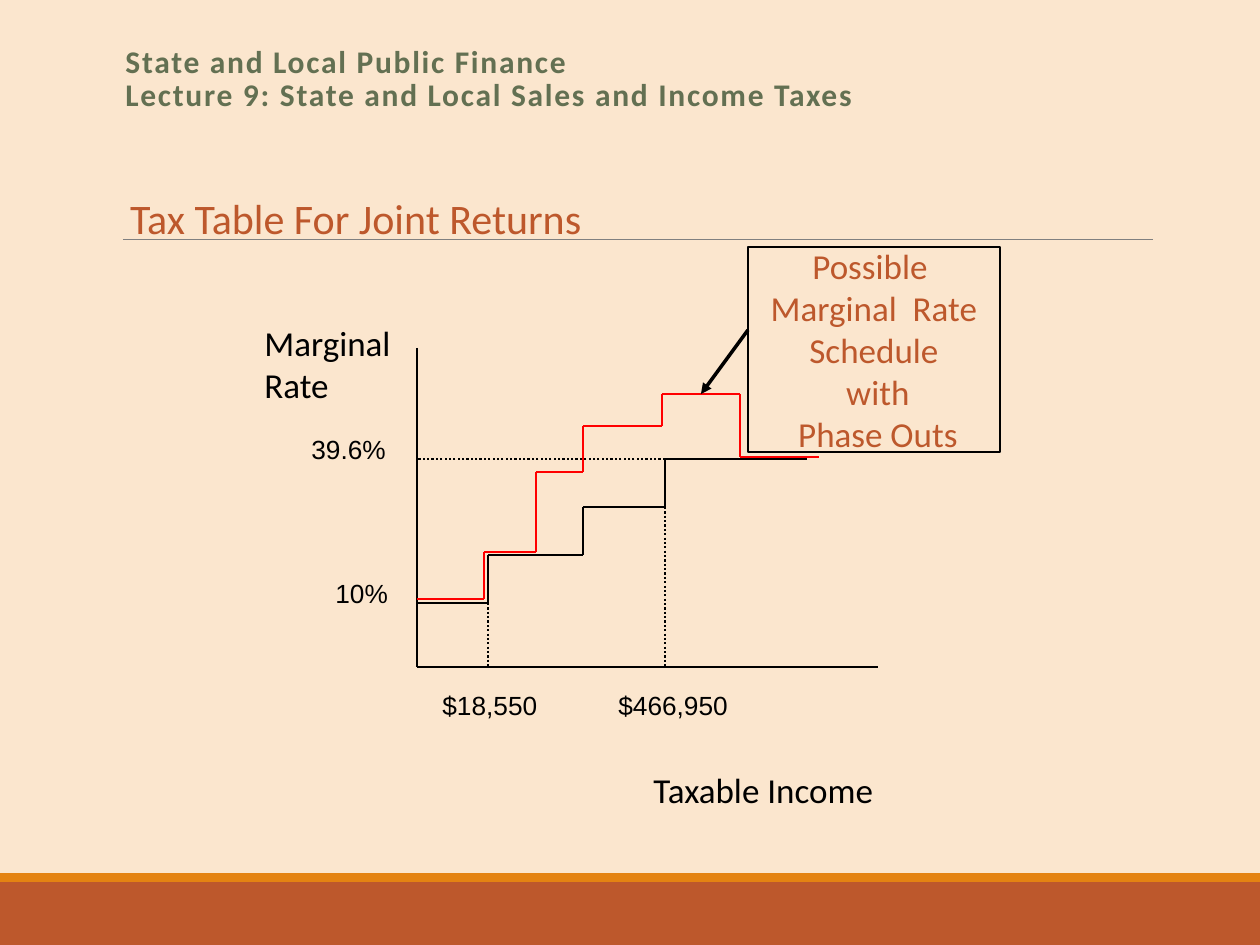
import dataclasses
import itertools

import lxml.etree
import pptx
import pptx.dml.color
import pptx.enum.dml
import pptx.enum.shapes
import pptx.enum.text
import pptx.oxml.ns
import pptx.util

EMU_PER_PX = 914400 / 126
COLORS = {
    "background": "FBE6CE",
    "rust": "BD582C",
    "orange": "E48312",
    "green": "637052",
    "gray": "808080",
    "black": "000000",
    "red": "FF0000",
}
Point = tuple[int, int]


@dataclasses.dataclass(frozen=True)
class Band:
    top: int
    height: int
    color: str


@dataclasses.dataclass(frozen=True)
class Label:
    lines: tuple[str, ...]
    left: int
    top: int
    width: int
    height: int
    size: int = 20
    font: str = "Calibri"
    color: str = "black"
    bold: bool = False
    tracking: float = 0
    frame_format: dict = dataclasses.field(default_factory=lambda: {"word_wrap": True})
    paragraph_format: dict = dataclasses.field(default_factory=dict)
    outlined: bool = False


@dataclasses.dataclass(frozen=True)
class Path:
    points: tuple[Point, ...]
    color: str = "black"
    width: float = 0.75
    dotted: bool = False
    arrow: bool = False


def px(length: int) -> int:
    return round(length * EMU_PER_PX)


def rgb(name: str) -> pptx.dml.color.RGBColor:
    return pptx.dml.color.RGBColor.from_string(COLORS[name])


def set_all(target, values: dict) -> None:
    for name, value in values.items():
        setattr(target, name, value)


def draw_band(slide, band: Band) -> None:
    shape = slide.shapes.add_shape(
        pptx.enum.shapes.MSO_SHAPE.RECTANGLE, 0, px(band.top), px(1260), px(band.height)
    )
    shape.shadow.inherit = False
    shape.fill.solid()
    shape.fill.fore_color.rgb = rgb(band.color)
    shape.line.fill.background()


def draw_label(slide, label: Label) -> None:
    box = [px(length) for length in (label.left, label.top, label.width, label.height)]
    if label.outlined:
        shape = slide.shapes.add_shape(pptx.enum.shapes.MSO_SHAPE.RECTANGLE, *box)
        shape.shadow.inherit = False
        shape.fill.background()
        shape.line.color.rgb = rgb("black")
        shape.line.width = pptx.util.Pt(0.75)
    else:
        shape = slide.shapes.add_textbox(*box)
    frame = shape.text_frame
    frame.text = "\n".join(label.lines)
    set_all(frame, label.frame_format)
    font_format = {
        "size": pptx.util.Pt(label.size),
        "name": label.font,
        "bold": label.bold,
    }
    for paragraph in frame.paragraphs:
        set_all(paragraph, label.paragraph_format)
        for run in paragraph.runs:
            set_all(run.font, font_format)
            run.font.color.rgb = rgb(label.color)
            if label.tracking:
                run.font._element.set("spc", str(round(label.tracking * 100)))


def draw_path(slide, path: Path) -> None:
    """Join each pair of neighbouring points with a straight connector."""
    for start, end in itertools.pairwise(path.points):
        connector = slide.shapes.add_connector(
            pptx.enum.shapes.MSO_CONNECTOR.STRAIGHT, *map(px, start + end)
        )
        connector.line.color.rgb = rgb(path.color)
        connector.line.width = pptx.util.Pt(path.width)
        if path.dotted:
            connector.line.dash_style = pptx.enum.dml.MSO_LINE.ROUND_DOT
        if path.arrow:
            lxml.etree.SubElement(
                connector.line._get_or_add_ln(), pptx.oxml.ns.qn("a:tailEnd"), type="triangle"
            )
        lxml.etree.SubElement(
            connector._element.spPr, pptx.oxml.ns.qn("a:effectLst")
        )


def stairs(start: Point, steps: tuple[Point, ...], end_x: int) -> tuple[Point, ...]:
    """Turn (x, new level) steps into the corners of a staircase."""
    points, level = [start], start[1]
    for x, new_level in steps:
        points += [(x, level), (x, new_level)]
        level = new_level
    return (*points, (end_x, level))


ORIGIN = (417, 667)
FIRST_BRACKET, TOP_BRACKET, TOP_RATE = 488, 665, 459

BANDS = (Band(882, 63, "rust"), Band(873, 9, "orange"))
PATHS = (
    Path(((123, 239), (1153, 239)), "gray", 0.5),
    Path(((417, 348), ORIGIN, (878, 667))),
    Path(stairs((417, 603), ((FIRST_BRACKET, 555), (583, 507), (TOP_BRACKET, TOP_RATE)), 807)),
    Path(((TOP_BRACKET, TOP_RATE), (417, TOP_RATE)), width=1.25, dotted=True),
    Path(((FIRST_BRACKET, 603), (FIRST_BRACKET, 667)), width=1.25, dotted=True),
    Path(((TOP_BRACKET, 507), (TOP_BRACKET, 667)), width=1.25, dotted=True),
    Path(
        stairs((417, 599), ((484, 552), (536, 472), (583, 426), (662, 394), (740, 457)), 819),
        "red",
        1.25,
    ),
    Path(((748, 330), (701, 394)), width=2, arrow=True),
)
LABELS = (
    Label(
        ("State and Local Public Finance\vLecture 9: State and Local Sales and Income Taxes",),
        113, 42, 1040, 82, size=18, color="green", bold=True, tracking=1,
        paragraph_format={"line_spacing": 0.85},
    ),
    Label(
        ("Tax Table For Joint Returns",), 130, 192, 638, 49, size=24, color="rust",
        frame_format={"word_wrap": True, "margin_left": 0, "margin_right": 0},
        paragraph_format={
            "line_spacing": 0.9,
            "space_before": pptx.util.Pt(6.8),
            "space_after": pptx.util.Pt(1.1),
        },
    ),
    Label(("Taxable Income",), 641, 762, 272, 64),
    Label(("Marginal Rate",), 252, 315, 154, 96),
    Label(("10%",), 323, 571, 87, 64, size=15, font="Arial"),
    Label(("39.6%",), 299, 427, 106, 64, size=15, font="Arial"),
    Label(("$18,550",), 430, 683, 130, 64, size=15, font="Arial"),
    Label(("$466,950",), 606, 683, 141, 64, size=15, font="Arial"),
    Label(
        ("Possible ", "Marginal  Rate", "Schedule", " with", " Phase Outs"),
        748, 247, 252, 205, color="rust", outlined=True,
        frame_format={
            "word_wrap": False,
            "vertical_anchor": pptx.enum.text.MSO_ANCHOR.MIDDLE,
        },
        paragraph_format={"alignment": pptx.enum.text.PP_ALIGN.CENTER},
    ),
)


def main() -> None:
    presentation = pptx.Presentation()
    set_all(presentation, {"slide_width": px(1260), "slide_height": px(945)})
    slide = presentation.slides.add_slide(presentation.slide_layouts[6])
    slide.background.fill.solid()
    slide.background.fill.fore_color.rgb = rgb("background")
    for band in BANDS:
        draw_band(slide, band)
    for path in PATHS:
        draw_path(slide, path)
    for label in LABELS:
        draw_label(slide, label)
    presentation.save("out.pptx")


if __name__ == "__main__":
    main()
